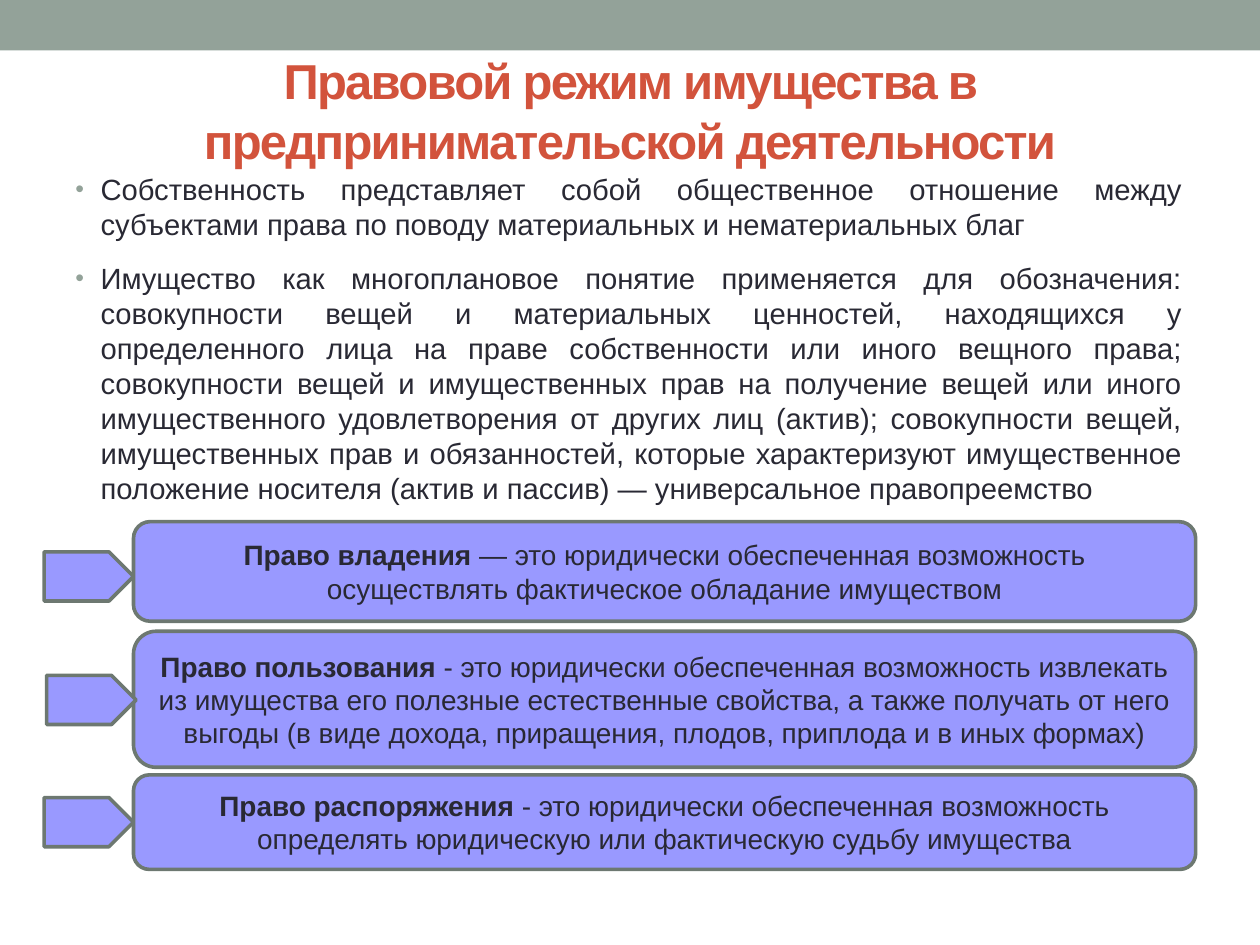
from dataclasses import dataclass

from lxml import etree
from pptx import Presentation
from pptx.dml.color import RGBColor
from pptx.enum.shapes import MSO_SHAPE
from pptx.enum.text import MSO_ANCHOR, PP_ALIGN
from pptx.oxml.ns import qn
from pptx.util import Inches, Pt

RECT, ROUNDED, PENTAGON = MSO_SHAPE.RECTANGLE, MSO_SHAPE.ROUNDED_RECTANGLE, MSO_SHAPE.PENTAGON
CENTER, JUSTIFY = PP_ALIGN.CENTER, PP_ALIGN.JUSTIFY
MIDDLE, TOP = MSO_ANCHOR.MIDDLE, MSO_ANCHOR.TOP


@dataclass(frozen=True)
class Theme:
    font: str = "Arial"
    band: str = "93A299"
    heading: str = "D2533C"
    ink: str = "292934"
    panel: str = "9999FF"
    outline: str = "6D7871"
    title_size: float = 28
    body_size: float = 16.7
    panel_size: float = 16
    outline_width: float = 2.08


THEME = Theme()
TITLE = "Правовой режим имущества в предпринимательской деятельности"
DEFINITIONS = [
    "Собственность представляет собой общественное отношение между субъектами права "
    "по поводу материальных и нематериальных благ",
    "Имущество как многоплановое понятие применяется для обозначения: совокупности вещей "
    "и материальных ценностей, находящихся у определенного лица на праве собственности или "
    "иного вещного права; совокупности вещей и имущественных прав на получение вещей или иного "
    "имущественного удовлетворения от других лиц (актив); совокупности вещей, имущественных "
    "прав и обязанностей, которые характеризуют имущественное положение носителя "
    "(актив и пассив) — универсальное правопреемство",
]
# Term, explanation, row top, row height, arrow left, arrow top
RIGHTS = [
    ("Право владения ",
     "— это юридически обеспеченная возможность осуществлять фактическое обладание имуществом",
     4.14, 0.79, 0.35, 4.38),
    ("Право пользования ",
     "- это юридически обеспеченная возможность извлекать из имущества его полезные естественные "
     "свойства, а также получать от него выгоды (в виде дохода, приращения, плодов, приплода "
     "и в иных формах)",
     5.01, 1.08, 0.37, 5.36),
    ("Право распоряжения ",
     "- это юридически обеспеченная возможность определять юридическую или фактическую "
     "судьбу имущества",
     6.15, 0.75, 0.35, 6.33),
]
PANEL_LEFT, PANEL_WIDTH = 1.06, 8.43
ARROW_WIDTH, ARROW_HEIGHT = 0.71, 0.39


def apply(target, values):
    for name, value in values.items():
        setattr(target, name, value)


def add_run(paragraph, text, size, color, bold=False):
    run = paragraph.add_run()
    run.text = text
    apply(run.font, {"name": THEME.font, "size": Pt(size), "bold": bold})
    run.font.color.rgb = RGBColor.from_string(color)
    return run


def add_panel(slide, kind, box, fill, outline=None):
    panel = slide.shapes.add_shape(kind, *map(Inches, box))
    panel.shadow.inherit = False
    panel.fill.solid()
    panel.fill.fore_color.rgb = RGBColor.from_string(fill)
    if outline:
        panel.line.color.rgb = RGBColor.from_string(outline)
        panel.line.width = Pt(THEME.outline_width)
    else:
        panel.line.fill.background()
    return panel


def add_text_frame(slide, box, anchor):
    frame = slide.shapes.add_textbox(*map(Inches, box)).text_frame
    apply(frame, {"word_wrap": True, "vertical_anchor": anchor,
                  "margin_top": 0, "margin_bottom": 0})
    return frame


def set_bullet(paragraph, color, indent=0.2):
    """Give the paragraph a hanging round bullet at 85 % of the text size."""
    properties = paragraph._p.get_or_add_pPr()
    properties.set("marL", str(Inches(indent)))
    properties.set("indent", str(-Inches(indent)))
    bullet_color = etree.SubElement(properties, qn("a:buClr"))
    etree.SubElement(bullet_color, qn("a:srgbClr"), val=color)
    etree.SubElement(properties, qn("a:buSzPct"), val="85000")
    etree.SubElement(properties, qn("a:buFont"), typeface=THEME.font)
    etree.SubElement(properties, qn("a:buChar"), char="•")


def add_title(slide, box):
    paragraph = add_text_frame(slide, box, MIDDLE).paragraphs[0]
    apply(paragraph, {"alignment": CENTER, "line_spacing": Pt(34)})
    run = add_run(paragraph, TITLE, THEME.title_size, THEME.heading, bold=True)
    run.font._element.set("spc", "-100")


def add_definitions(slide, box):
    frame = add_text_frame(slide, box, TOP)
    for index, definition in enumerate(DEFINITIONS):
        paragraph = frame.add_paragraph() if index else frame.paragraphs[0]
        apply(paragraph, {"alignment": JUSTIFY, "line_spacing": Pt(20),
                          "space_before": Pt(11 if index else 0)})
        set_bullet(paragraph, THEME.band)
        add_run(paragraph, definition, THEME.body_size, THEME.ink)


def add_right(slide, term, explanation, top, height, arrow_left, arrow_top):
    """Draw one right as a panel with an arrow pointing at its left side."""
    panel = add_panel(slide, ROUNDED, (PANEL_LEFT, top, PANEL_WIDTH, height),
                      THEME.panel, THEME.outline)
    apply(panel.text_frame, {"word_wrap": True, "vertical_anchor": MIDDLE})
    paragraph = panel.text_frame.paragraphs[0]
    apply(paragraph, {"alignment": CENTER, "line_spacing": Pt(19)})
    add_run(paragraph, term, THEME.panel_size, THEME.ink, bold=True)
    add_run(paragraph, explanation, THEME.panel_size, THEME.ink)
    add_panel(slide, PENTAGON, (arrow_left, arrow_top, ARROW_WIDTH, ARROW_HEIGHT),
              THEME.panel, THEME.outline)


def main():
    deck = Presentation()
    apply(deck, {"slide_width": Inches(10), "slide_height": Inches(7.5)})
    slide = deck.slides.add_slide(deck.slide_layouts[6])
    add_panel(slide, RECT, (0, 0, 10, 0.4), THEME.band)
    add_title(slide, (0.5, 0.43, 9, 0.88))
    add_definitions(slide, (0.5, 1.36, 8.98, 2.78))
    for right in RIGHTS:
        add_right(slide, *right)
    deck.save("out.pptx")


if __name__ == "__main__":
    main()
